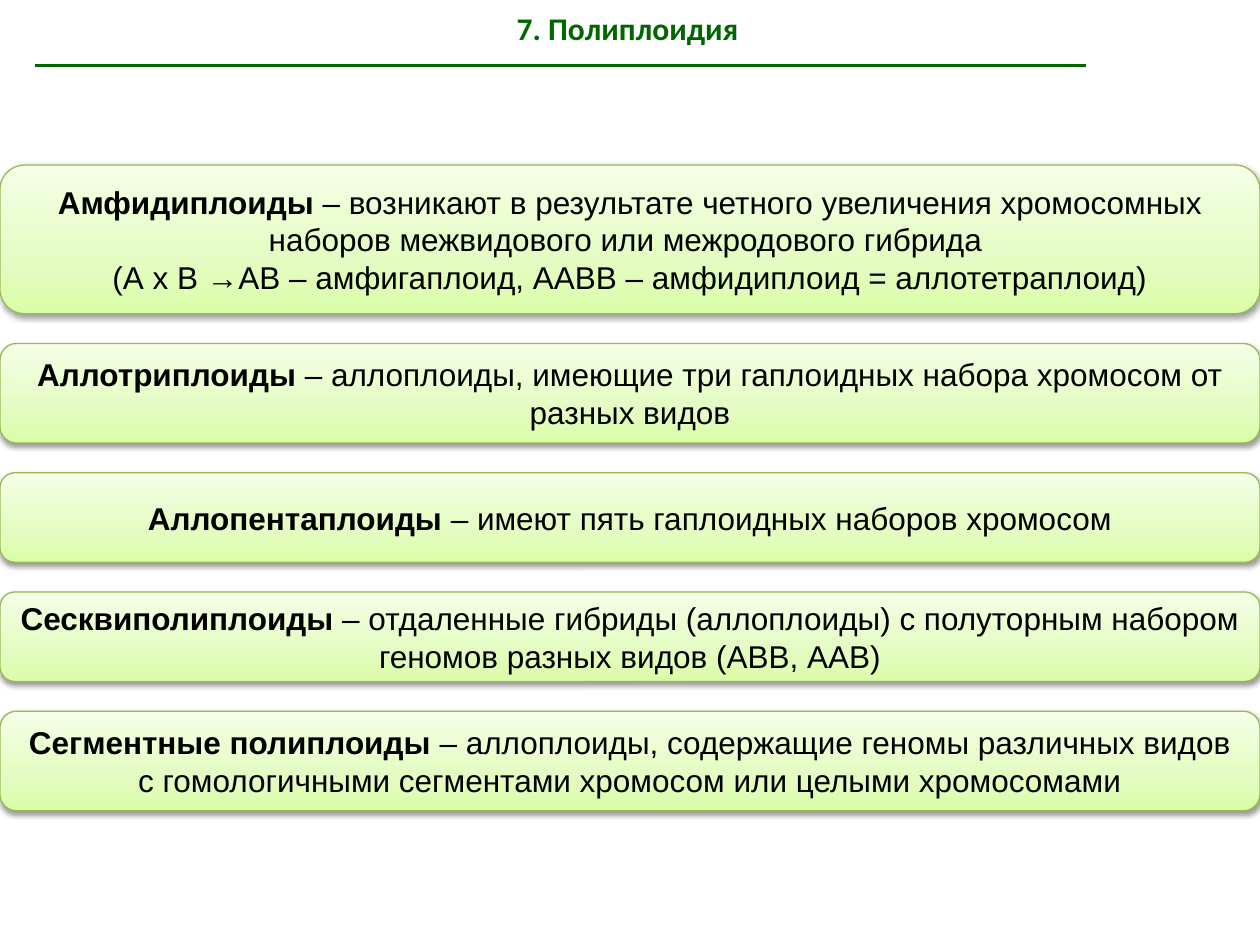
import copy
from dataclasses import dataclass

import lxml.etree
import pptx
import pptx.dml.color
import pptx.enum.shapes
import pptx.enum.text
import pptx.oxml
import pptx.oxml.ns
import pptx.slide
import pptx.util

Inches = pptx.util.Inches
Pt = pptx.util.Pt
RGBColor = pptx.dml.color.RGBColor
qn = pptx.oxml.ns.qn

DARK_GREEN = RGBColor(0x00, 0x66, 0x00)
BORDER_GREEN = RGBColor(0x98, 0xB9, 0x55)
BLACK = RGBColor(0x00, 0x00, 0x00)
GRADIENT = [
    (0, RGBColor(0xDA, 0xFD, 0xA7)),
    (0.35, RGBColor(0xE4, 0xFC, 0xC2)),
    (1, RGBColor(0xF5, 0xFF, 0xE7)),
]
SHADOW_XML = (
    '<a:outerShdw xmlns:a="http://schemas.openxmlformats.org/drawingml/2006/main"'
    ' blurRad="40000" dist="20000" dir="5400000" rotWithShape="0">'
    '<a:srgbClr val="000000"><a:alpha val="38000"/></a:srgbClr></a:outerShdw>'
)

SLIDE_WIDTH = Inches(10)
FIRST_TOP = Inches(1.31)
GAP = Pt(17)


@dataclass
class Definition:
    height: float
    term: str
    meaning: str
    formula: str = ""


DEFINITIONS = [
    Definition(1.18, "Амфидиплоиды",
               " – возникают в результате четного увеличения хромосомных наборов "
               "межвидового или межродового гибрида ",
               "(А х В →АВ – амфигаплоид, ААВВ – амфидиплоид = аллотетраплоид)"),
    Definition(0.79, "Аллотриплоиды",
               " – аллоплоиды, имеющие три гаплоидных набора хромосом от разных видов"),
    Definition(0.71, "Аллопентаплоиды",
               " – имеют пять гаплоидных наборов хромосом"),
    Definition(0.71, "Сесквиполиплоиды",
               " – отдаленные гибриды (аллоплоиды) с полуторным набором геномов "
               "разных видов (АВВ, ААВ)"),
    Definition(0.79, "Сегментные полиплоиды ",
               "– аллоплоиды, содержащие геномы различных видов с гомологичными "
               "сегментами хромосом или целыми хромосомами"),
]


def add_run(paragraph, text: str, color: RGBColor, name: str, bold: bool) -> None:
    paragraph.alignment = pptx.enum.text.PP_ALIGN.CENTER
    run = paragraph.add_run()
    run.text = text
    for attribute, value in {"name": name, "size": Pt(18), "bold": bold}.items():
        setattr(run.font, attribute, value)
    run.font.color.rgb = color


def paint_card(card) -> None:
    # Three-stop gradient, running from the bottom up
    card.fill.gradient()
    card.fill.gradient_angle = 90
    stop_list = card._element.spPr.find(qn("a:gradFill")).find(qn("a:gsLst"))
    stop_list.append(copy.deepcopy(stop_list[-1]))
    for stop, (position, color) in zip(card.fill.gradient_stops, GRADIENT):
        stop.position = position
        stop.color.rgb = color
    card.line.color.rgb = BORDER_GREEN
    card.line.width = Pt(0.75)
    # Soft shadow below
    card.shadow.inherit = False
    effects = card._element.spPr.find(qn("a:effectLst"))
    effects.append(pptx.oxml.parse_xml(SHADOW_XML))


def add_definition(slide: pptx.slide.Slide, definition: Definition, top: int) -> int:
    """Draw one card and return its bottom edge."""
    height = Inches(definition.height)
    card = slide.shapes.add_shape(
        pptx.enum.shapes.MSO_SHAPE.ROUNDED_RECTANGLE, 0, top, SLIDE_WIDTH, height)
    paint_card(card)
    frame = card.text_frame
    frame.word_wrap = True
    frame.vertical_anchor = pptx.enum.text.MSO_ANCHOR.MIDDLE
    add_run(frame.paragraphs[0], definition.term, BLACK, "Arial", True)
    add_run(frame.paragraphs[0], definition.meaning, BLACK, "Arial", False)
    if definition.formula:
        add_run(frame.add_paragraph(), definition.formula, BLACK, "Arial", False)
    return top + height


def add_heading(slide: pptx.slide.Slide) -> None:
    heading = slide.shapes.title
    place = {"left": Inches(0.51), "top": 0, "width": Inches(9), "height": Inches(0.44)}
    for attribute, value in place.items():
        setattr(heading, attribute, value)
    heading.text_frame.vertical_anchor = pptx.enum.text.MSO_ANCHOR.MIDDLE
    add_run(heading.text_frame.paragraphs[0], "7. Полиплоидия ",
            DARK_GREEN, "Calibri", True)

    # Rule under the heading
    rule = slide.shapes.add_connector(
        pptx.enum.shapes.MSO_CONNECTOR.STRAIGHT,
        Inches(0.28), Inches(0.52), Inches(8.62), Inches(0.52))
    rule.line.color.rgb = DARK_GREEN
    rule.line.width = Pt(2)
    lxml.etree.SubElement(rule._element.spPr, qn("a:effectLst"))


def main() -> None:
    presentation = pptx.Presentation()
    presentation.slide_width = SLIDE_WIDTH
    presentation.slide_height = Inches(7.5)
    slide = presentation.slides.add_slide(presentation.slide_layouts[5])

    add_heading(slide)
    top = FIRST_TOP
    for definition in DEFINITIONS:
        top = add_definition(slide, definition, top) + GAP

    presentation.save("out.pptx")


if __name__ == "__main__":
    main()
